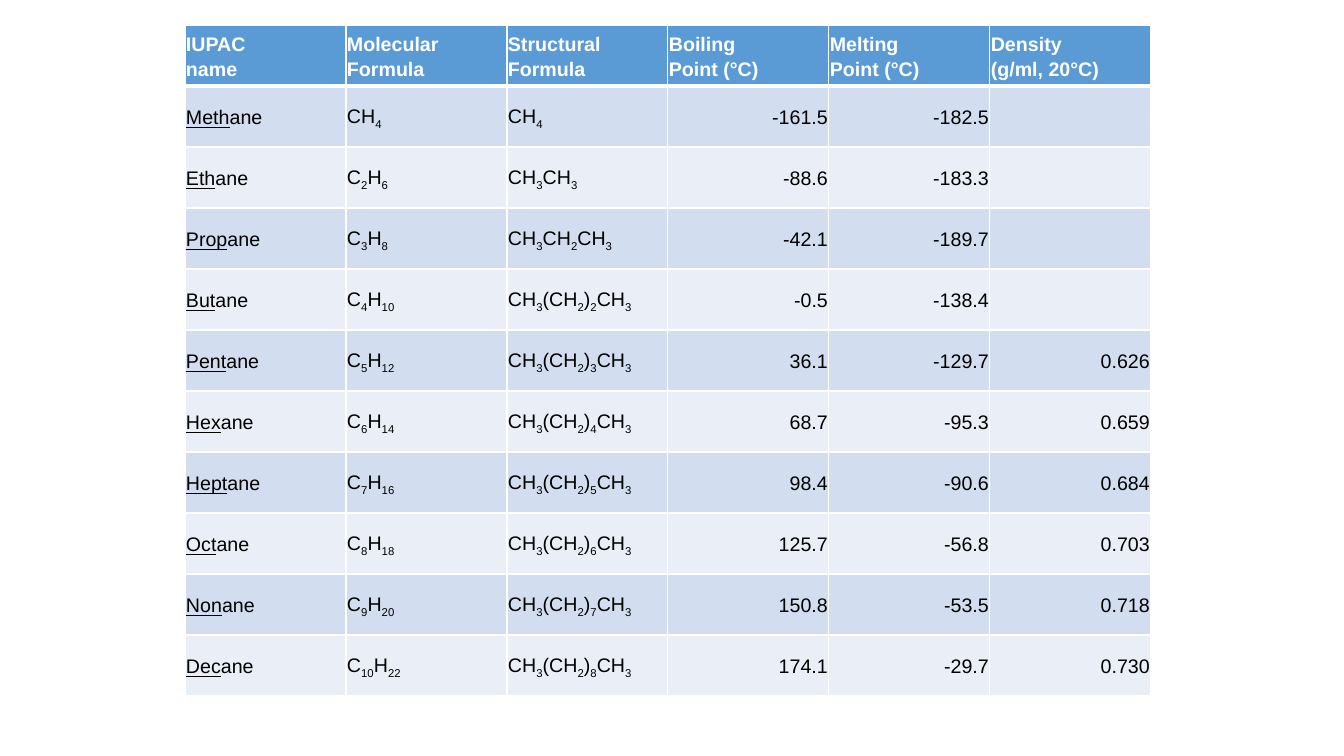
import dataclasses
import itertools

import lxml.etree
import pptx
import pptx.dml.color
import pptx.enum.text
import pptx.oxml.ns
import pptx.table
import pptx.util

EMU_PER_PX = 9071
SLIDE_W, SLIDE_H = 1344, 756
LEFT, TOP, COL_W, ROW_H = 185, 25, 161, 61
CELL_MARGIN = 1
COLORS = {
    "header": "5B9BD5",
    "odd": "D2DEEF",
    "even": "EAEFF7",
    "white": "FFFFFF",
    "black": "000000",
}
HEADERS = [
    "IUPAC\nname",
    "Molecular\nFormula",
    "Structural\nFormula",
    "Boiling\nPoint (°C)",
    "Melting\nPoint (°C)",
    "Density\n(g/ml, 20°C)",
]


@dataclasses.dataclass
class Alkane:
    stem: str
    boiling: str
    melting: str
    density: str = ""


ALKANES = [
    Alkane("Meth", "-161.5", "-182.5"),
    Alkane("Eth", "-88.6", "-183.3"),
    Alkane("Prop", "-42.1", "-189.7"),
    Alkane("But", "-0.5", "-138.4"),
    Alkane("Pent", "36.1", "-129.7", "0.626"),
    Alkane("Hex", "68.7", "-95.3", "0.659"),
    Alkane("Hept", "98.4", "-90.6", "0.684"),
    Alkane("Oct", "125.7", "-56.8", "0.703"),
    Alkane("Non", "150.8", "-53.5", "0.718"),
    Alkane("Dec", "174.1", "-29.7", "0.730"),
]


def px(n: int) -> pptx.util.Emu:
    return pptx.util.Emu(n * EMU_PER_PX)


def rgb(name: str) -> pptx.dml.color.RGBColor:
    return pptx.dml.color.RGBColor.from_string(COLORS[name])


def molecular_formula(carbons: int) -> str:
    return f"C{carbons if carbons > 1 else ''}H{2 * carbons + 2}"


def structural_formula(carbons: int) -> str:
    short = {1: "CH4", 2: "CH3CH3", 3: "CH3CH2CH3"}
    return short.get(carbons, f"CH3(CH2){carbons - 2}CH3")


def add_run(p, text: str, *, color: str = "black", bold: bool = False,
            underline: bool = False, subscript: bool = False) -> None:
    r = p.add_run()
    r.text = text
    r.font.name = "Arial"
    r.font.size = pptx.util.Pt(14)
    r.font.bold = bold
    r.font.underline = underline
    r.font.color.rgb = rgb(color)
    if subscript:
        r._r.get_or_add_rPr().set("baseline", "-25000")


def add_formula(p, formula: str) -> None:
    for is_digit, chars in itertools.groupby(formula, str.isdigit):
        add_run(p, "".join(chars), subscript=is_digit)


def set_border(cell: pptx.table._Cell, side: str, width: int) -> None:
    qn = pptx.oxml.ns.qn
    ln = lxml.etree.SubElement(cell._tc.get_or_add_tcPr(), qn(f"a:ln{side}"),
                               w=str(pptx.util.Pt(width)))
    fill = lxml.etree.SubElement(ln, qn("a:solidFill"))
    lxml.etree.SubElement(fill, qn("a:srgbClr"), val=COLORS["white"])


def format_cell(cell: pptx.table._Cell, fill: str, *, right: bool = False,
                top: int = 1, bottom: int = 1):
    for side, width in (("L", 1), ("R", 1), ("T", top), ("B", bottom)):
        set_border(cell, side, width)
    cell.fill.solid()
    cell.fill.fore_color.rgb = rgb(fill)
    cell.margin_left = cell.margin_right = px(CELL_MARGIN)
    cell.margin_top = cell.margin_bottom = px(CELL_MARGIN)
    cell.vertical_anchor = pptx.enum.text.MSO_ANCHOR.MIDDLE
    p = cell.text_frame.paragraphs[0]
    p.line_spacing = 1.15
    p.space_after = pptx.util.Pt(10)
    if right:
        p.alignment = pptx.enum.text.PP_ALIGN.RIGHT
    return p


def fill_header(table: pptx.table.Table) -> None:
    for col, header in enumerate(HEADERS):
        p = format_cell(table.cell(0, col), "header", bottom=3)
        first, second = header.split("\n")
        add_run(p, first, color="white", bold=True)
        p.add_line_break()
        add_run(p, second, color="white", bold=True)


def fill_alkane(table: pptx.table.Table, carbons: int, alkane: Alkane) -> None:
    fill = "odd" if carbons % 2 else "even"
    paragraphs = [
        format_cell(table.cell(carbons, col), fill, right=col >= 3,
                    top=3 if carbons == 1 else 1)
        for col in range(len(HEADERS))
    ]
    add_run(paragraphs[0], alkane.stem, underline=True)
    add_run(paragraphs[0], "ane")
    add_formula(paragraphs[1], molecular_formula(carbons))
    add_formula(paragraphs[2], structural_formula(carbons))
    values = (alkane.boiling, alkane.melting, alkane.density)
    for p, value in zip(paragraphs[3:], values):
        if value:
            add_run(p, value)


def main() -> None:
    prs = pptx.Presentation()
    prs.slide_width, prs.slide_height = px(SLIDE_W), px(SLIDE_H)
    slide = prs.slides.add_slide(prs.slide_layouts[6])
    rows, cols = len(ALKANES) + 1, len(HEADERS)
    table = slide.shapes.add_table(rows, cols, px(LEFT), px(TOP),
                                   px(cols * COL_W), px(rows * ROW_H)).table
    for column in table.columns:
        column.width = px(COL_W)
    for row in table.rows:
        row.height = px(ROW_H)
    fill_header(table)
    for carbons, alkane in enumerate(ALKANES, start=1):
        fill_alkane(table, carbons, alkane)
    prs.save("out.pptx")


if __name__ == "__main__":
    main()
